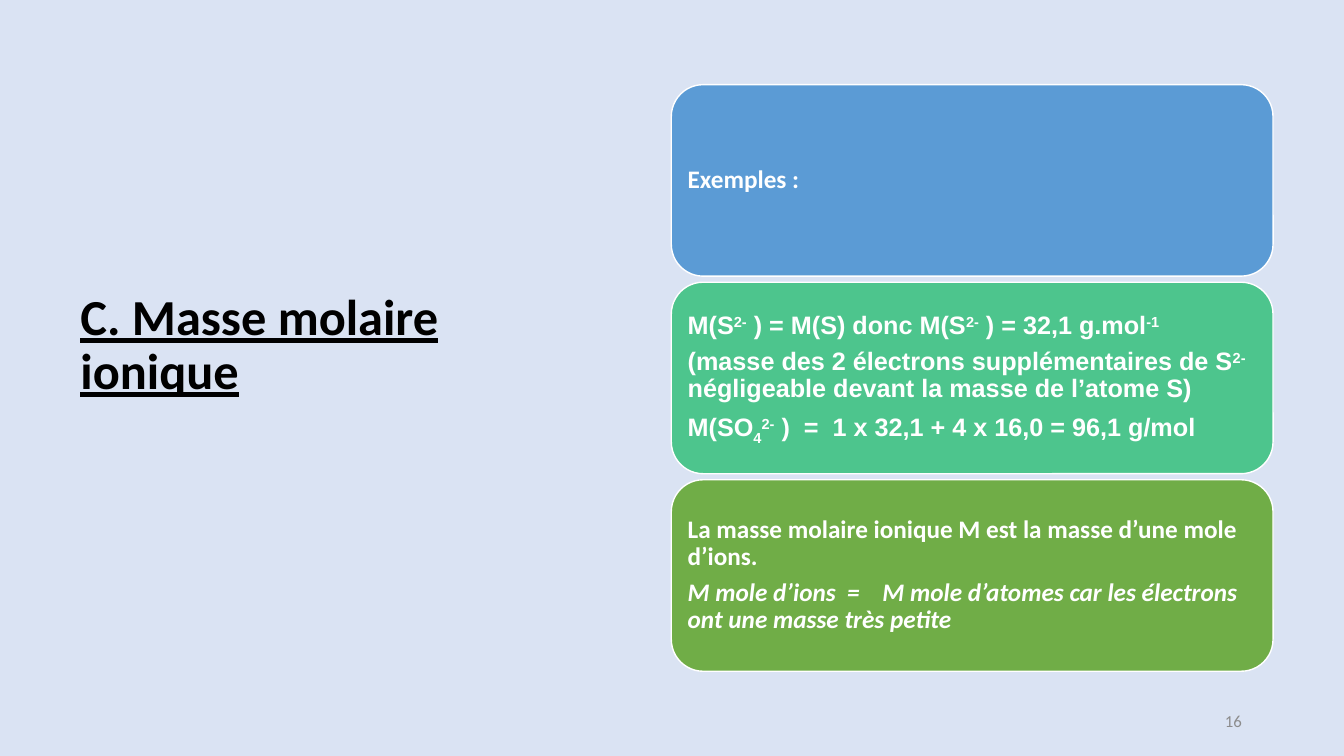
from dataclasses import dataclass

import pptx
import pptx.dml.color
import pptx.enum.shapes
import pptx.enum.text
import pptx.util
import pptx.shapes.autoshape
import pptx.slide
import pptx.text.text

RGBColor = pptx.dml.color.RGBColor
BACKGROUND = RGBColor(0xDA, 0xE3, 0xF3)
BLUE = RGBColor(0x5B, 0x9B, 0xD5)
TEAL = RGBColor(0x4D, 0xC5, 0x8D)
GREEN = RGBColor(0x70, 0xAD, 0x47)
WHITE = RGBColor(0xFF, 0xFF, 0xFF)
BLACK = RGBColor(0x00, 0x00, 0x00)
GREY = RGBColor(0x8C, 0x8C, 0x8C)

SLIDE_WIDTH = pptx.util.Inches(13.33)
SLIDE_HEIGHT = pptx.util.Inches(7.5)
COLUMNS = 160
ROWS = 90
CARD_LEFT = 79.92
CARD_TOP = 10.08
CARD_WIDTH = 71.64
CARD_HEIGHT = 22.8
CARD_PITCH = 23.52
CARD_INSET = pptx.util.Inches(0.07)
SUPERSCRIPT = 30
SUBSCRIPT = -25


@dataclass(frozen=True)
class Piece:
    text: str
    baseline: int = 0


@dataclass(frozen=True)
class Line:
    pieces: tuple[Piece, ...]
    italic: bool = False


@dataclass(frozen=True)
class Card:
    fill: RGBColor
    font: str
    lines: tuple[Line, ...]


CHARGE = Piece("2-", SUPERSCRIPT)
CARDS = (
    Card(BLUE, "Calibri", (Line((Piece("Exemples :"),)),)),
    Card(TEAL, "Arial", (
        Line((Piece("M(S"), CHARGE, Piece(" ) = M(S) donc M(S"), CHARGE,
              Piece(" ) = 32,1 g.mol"), Piece("-1", SUPERSCRIPT))),
        Line((Piece("(masse des 2 électrons supplémentaires de S"), CHARGE,
              Piece(" négligeable devant la masse de l’atome S)"))),
        Line((Piece("M(SO"), Piece("4", SUBSCRIPT), CHARGE,
              Piece(" )  =  1 x 32,1 + 4 x 16,0 = 96,1 g/mol"))),
    )),
    Card(GREEN, "Calibri", (
        Line((Piece("La masse molaire ionique M est la masse d’une mole d’ions."),)),
        Line((Piece("M mole d’ions  =    M mole d’atomes car les électrons "
                    "ont une masse très petite"),), italic=True),
    )),
)


def place(left: float, top: float, width: float, height: float) -> tuple[int, ...]:
    return (round(left * SLIDE_WIDTH / COLUMNS), round(top * SLIDE_HEIGHT / ROWS),
            round(width * SLIDE_WIDTH / COLUMNS), round(height * SLIDE_HEIGHT / ROWS))


def add_span(para: pptx.text.text._Paragraph, text: str, font: str, size: float,
             color: RGBColor, bold: bool = True) -> pptx.text.text._Run:
    span = para.add_run()
    span.text = text
    span.font.name = font
    span.font.size = pptx.util.Pt(size)
    span.font.bold = bold
    span.font.color.rgb = color
    return span


def add_text_box(page: pptx.slide.Slide, area: tuple[int, ...]) -> pptx.text.text._Paragraph:
    frame = page.shapes.add_textbox(*area).text_frame
    frame.word_wrap = True
    frame.vertical_anchor = pptx.enum.text.MSO_ANCHOR.MIDDLE
    return frame.paragraphs[0]


def add_card(page: pptx.slide.Slide, card: Card, row: int) -> None:
    area = place(CARD_LEFT, CARD_TOP + row * CARD_PITCH, CARD_WIDTH, CARD_HEIGHT)
    box = page.shapes.add_shape(pptx.enum.shapes.MSO_SHAPE.ROUNDED_RECTANGLE, *area)
    box.shadow.inherit = False
    box.fill.solid()
    box.fill.fore_color.rgb = card.fill
    box.line.color.rgb = WHITE
    box.line.width = pptx.util.Pt(1)
    frame = box.text_frame
    frame.word_wrap = True
    frame.vertical_anchor = pptx.enum.text.MSO_ANCHOR.MIDDLE
    frame.margin_left = frame.margin_right = CARD_INSET
    frame.margin_top = frame.margin_bottom = CARD_INSET
    for index, line in enumerate(card.lines):
        para = frame.add_paragraph() if index else frame.paragraphs[0]
        para.alignment = pptx.enum.text.PP_ALIGN.LEFT
        para.line_spacing = 0.9
        para.space_after = pptx.util.Pt(6.3)
        for piece in line.pieces:
            span = add_span(para, piece.text, card.font, 18, WHITE)
            span.font.italic = line.italic
            if piece.baseline:
                span._r.get_or_add_rPr().set("baseline", str(piece.baseline * 1000))


def main() -> None:
    deck = pptx.Presentation()
    deck.slide_width = SLIDE_WIDTH
    deck.slide_height = SLIDE_HEIGHT
    page = deck.slides.add_slide(deck.slide_layouts[6])
    page.background.fill.solid()
    page.background.fill.fore_color.rgb = BACKGROUND

    title = add_text_box(page, place(8.4, 8.4, 63, 65.64))
    title.line_spacing = 0.9
    add_span(title, "C. Masse molaire ionique", "Calibri", 36, BLACK).font.underline = True

    for row, card in enumerate(CARDS):
        add_card(page, card, row)

    number = add_text_box(page, place(113.04, 83.4, 36, 4.8))
    number.alignment = pptx.enum.text.PP_ALIGN.RIGHT
    add_span(number, "16", "Calibri", 12, GREY, bold=False)

    deck.save("out.pptx")


if __name__ == "__main__":
    main()
